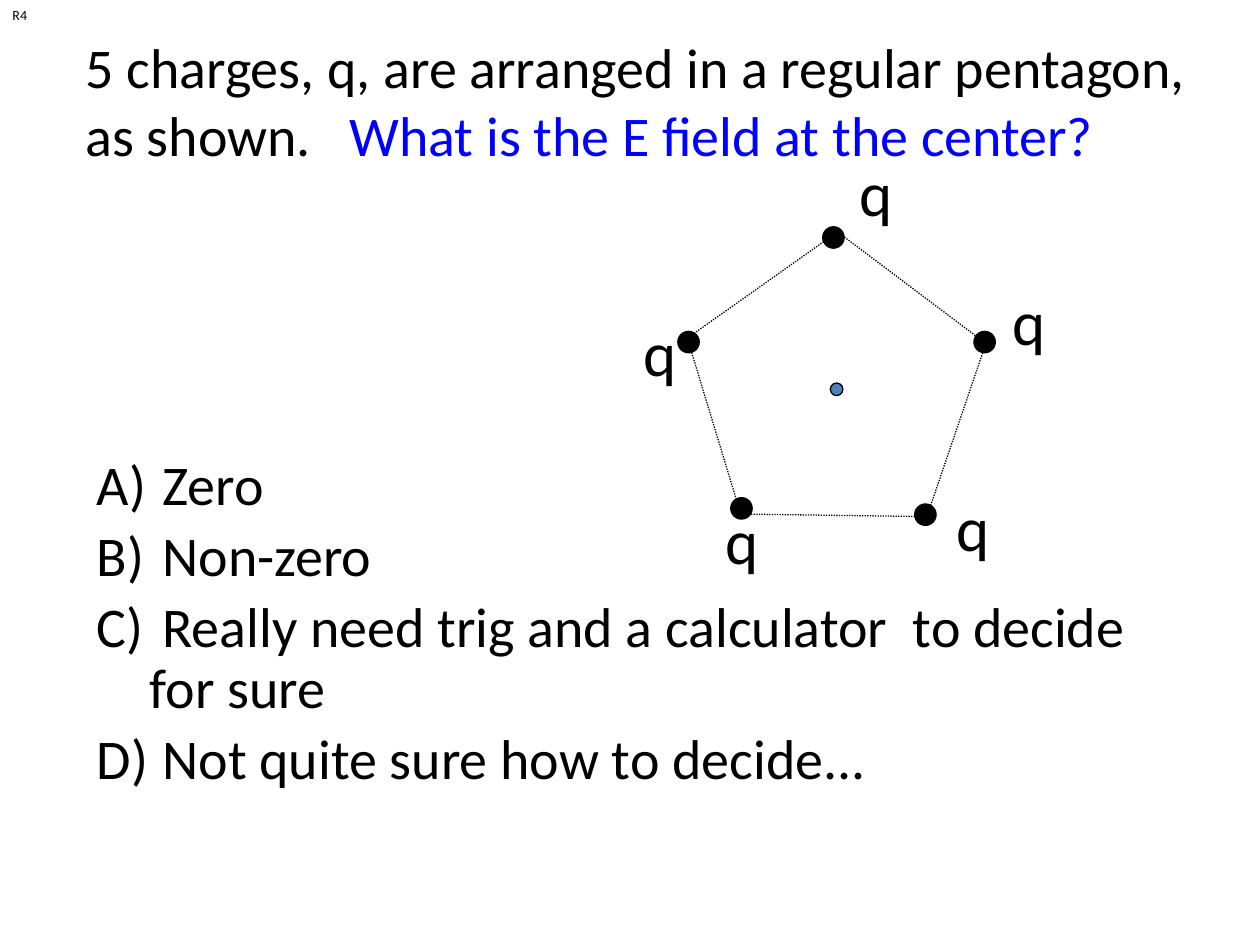
from lxml import etree
from pptx import Presentation
from pptx import util as u
from pptx.dml.color import RGBColor
from pptx.enum import dml, shapes, text
from pptx.oxml.ns import qn

BLACK, BLUE, STEEL = "000000", "0000FF", "4F81BD"
FONT = "Calibri"
CHARGES = [(7.26, 4), (5.8, 3.95), (5.38, 2.63), (6.53, 1.8), (7.73, 2.63)]
LABELS = [(6.72, 1.17), (7.94, 2.19), (7.49, 3.83), (5.66, 3.93), (5.01, 2.44)]
EDGES = [
    (7.36, 4.09, 7.82, 2.74),
    (5.9, 4.08, 7.32, 4.1),
    (5.46, 2.7, 5.87, 4.05),
    (6.62, 1.86, 5.46, 2.68),
    (7.79, 2.7, 6.66, 1.85),
]
ANSWERS = [
    " Zero",
    " Non-zero",
    " Really need trig and a calculator  to decide for sure",
    " Not quite sure how to decide...",
]


def color(value):
    """Turn a hex string into a colour."""
    return RGBColor.from_string(value)


def style(font, size, value=BLACK):
    """Set the typeface, size and colour of a font."""
    font.name, font.size = FONT, u.Pt(size)
    font.color.rgb = color(value)


def add_box(parent, left, top, width, height):
    """Add a wrapping text box and return its text frame."""
    box = parent.add_textbox(*map(u.Inches, (left, top, width, height)))
    box.text_frame.word_wrap = True
    return box.text_frame


def add_label(parent, words, size, left, top, width, height):
    """Add a one-line label that fits its text."""
    frame = add_box(parent, left, top, width, height)
    frame.word_wrap = False
    frame.auto_size = text.MSO_AUTO_SIZE.SHAPE_TO_FIT_TEXT
    para = frame.paragraphs[0]
    para.text = words
    style(para.font, size)


def add_question(parent):
    """Add the question with its blue second sentence."""
    frame = add_box(parent, 0.58, 0.17, 9, 1.25)
    frame.vertical_anchor = text.MSO_ANCHOR.MIDDLE
    para = frame.paragraphs[0]
    for words, value in (
        ("5 charges, q, are arranged in a regular pentagon, as shown.   ", BLACK),
        ("What is the E field at the center?", BLUE),
    ):
        span = para.add_run()
        span.text = words
        style(span.font, 32, value)


def add_answers(parent):
    """Add the lettered answers."""
    frame = add_box(parent, 0.67, 3.58, 8.5, 3.97)
    for index, words in enumerate(ANSWERS):
        para = frame.add_paragraph() if index else frame.paragraphs[0]
        para.text = words
        para.line_spacing, para.space_before = 0.9, u.Pt(6)
        style(para.font, 32)
        props = para._p.get_or_add_pPr()
        props.set("marL", str(u.Inches(0.42)))
        props.set("indent", str(-u.Inches(0.42)))
        bullet = etree.Element(qn("a:buAutoNum"), type="alphaUcParenR")
        props.insert_element_before(bullet, "a:tabLst", "a:defRPr", "a:extLst")


def add_edge(parent, *ends):
    """Add one dotted side of the pentagon."""
    edge = parent.add_connector(shapes.MSO_CONNECTOR.STRAIGHT, *map(u.Inches, ends))
    edge.line.color.rgb = color(BLACK)
    edge.line.width = u.Pt(0.75)
    edge.line.dash_style = dml.MSO_LINE.ROUND_DOT
    etree.SubElement(edge._element.spPr, qn("a:effectLst"))


def add_dot(parent, left, top, size, fill):
    """Add a round, black-edged dot."""
    dot = parent.add_shape(
        shapes.MSO_SHAPE.OVAL, *map(u.Inches, (left, top, size, size))
    )
    dot.shadow.inherit = False
    dot.fill.solid()
    dot.fill.fore_color.rgb = color(fill)
    dot.line.color.rgb = color(BLACK)
    dot.line.width = u.Pt(0.75)


def add_pentagon(parent):
    """Add the grouped pentagon of charges, its center and its labels."""
    group = parent.add_group_shape().shapes
    for ends in EDGES:
        add_edge(group, *ends)
    for left, top in CHARGES:
        add_dot(group, left, top, 0.17, BLACK)
    add_dot(group, 6.59, 3.04, 0.1, STEEL)
    for left, top in LABELS:
        add_label(group, "q", 36, left, top, 0.48, 0.7)


def main():
    """Build and save the slide."""
    deck = Presentation()
    deck.slide_width, deck.slide_height = u.Inches(10), u.Inches(7.5)
    page = deck.slides.add_slide(deck.slide_layouts[6])
    add_question(page.shapes)
    add_answers(page.shapes)
    add_pentagon(page.shapes)
    add_label(page.shapes, "R4", 8, 0, 0, 0.32, 0.24)
    deck.save("out.pptx")


if __name__ == "__main__":
    main()
